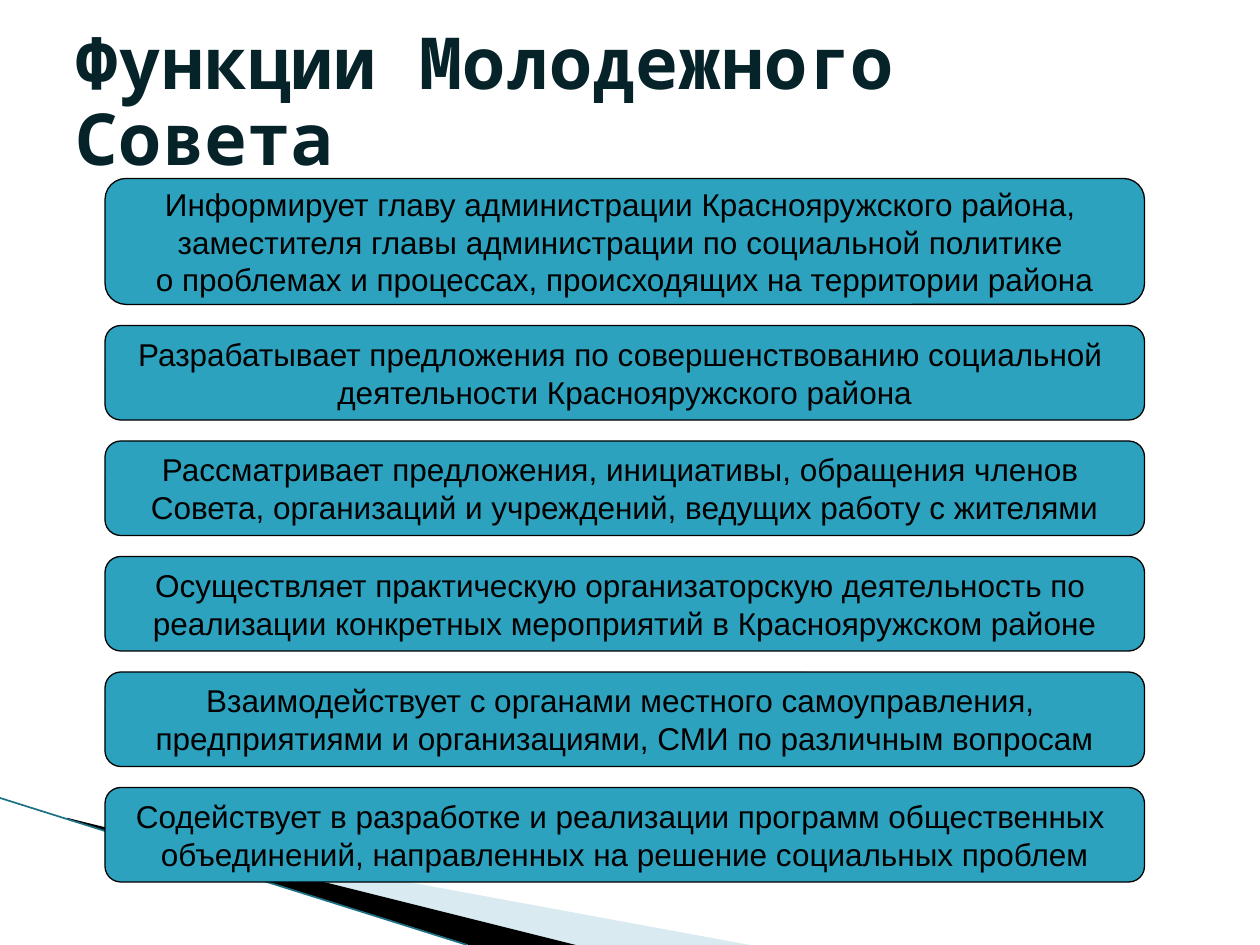
from dataclasses import dataclass

import pptx
import pptx.dml.color
import pptx.enum.shapes
import pptx.enum.text
import pptx.oxml
import pptx.oxml.ns
import pptx.util

Pt = pptx.util.Pt
RGBColor = pptx.dml.color.RGBColor

INK = RGBColor(0x06, 0x23, 0x29)
TEAL = RGBColor(0x2D, 0xA2, 0xBF)
DEEP_TEAL = RGBColor(0x1B, 0x70, 0x84)
PALE_BLUE = RGBColor(0xA0, 0xCB, 0xDC)
BLACK = RGBColor(0, 0, 0)

SLIDE_WIDTH, SLIDE_HEIGHT = 720, 540
CARD_LEFT, CARD_WIDTH, CARD_GAP = 60, 594, 12
FIRST_CARD_TOP = 102
HANGING_INDENT = 27


@dataclass
class Function:
    lines: list[str]

    @property
    def height(self) -> float:
        return 18 * (len(self.lines) + 1)


@dataclass
class Wedge:
    points: list[tuple[float, float]]
    colour: RGBColor
    opacity: int = 100


FUNCTIONS = [
    Function(["Информирует главу администрации Краснояружского района, ",
              "заместителя главы администрации по социальной политике ",
              "о проблемах и процессах, происходящих на территории района"]),
    Function(["Разрабатывает предложения по совершенствованию социальной ",
              "деятельности Краснояружского района"]),
    Function(["Рассматривает предложения, инициативы, обращения членов ",
              "Совета, организаций и учреждений, ведущих работу с жителями"]),
    Function(["Осуществляет практическую организаторскую деятельность по ",
              "реализации конкретных мероприятий в Краснояружском районе"]),
    Function(["Взаимодействует с органами местного самоуправления, ",
              "предприятиями и организациями, СМИ по различным вопросам"]),
    Function(["Содействует в разработке и реализации программ общественных ",
              "объединений, направленных на решение социальных проблем"]),
]

WEDGES = [
    Wedge([(39.6, 468.4), (428.4, 540), (328.3, 540), (39.6, 468)], PALE_BLUE, 40),
    Wedge([(38.2, 467.3), (329, 540), (268, 540), (38.9, 468)], BLACK),
]


def add_title(slide, text: str) -> None:
    title = slide.shapes.title
    title.left, title.top, title.width, title.height = Pt(36), Pt(18), Pt(648), Pt(75.6)
    frame = title.text_frame
    frame.text = text
    frame.word_wrap = True
    frame.auto_size = pptx.enum.text.MSO_AUTO_SIZE.NONE
    frame.vertical_anchor = pptx.enum.text.MSO_ANCHOR.MIDDLE
    frame.margin_top = Pt(11.6)
    heading = frame.paragraphs[0]
    heading.alignment = pptx.enum.text.PP_ALIGN.LEFT
    heading.line_spacing = 0.88
    heading.font.name = "Noto Sans Mono"
    heading.font.size = Pt(41)
    heading.font.bold = True
    heading.font.color.rgb = INK


def add_wedge(slide, wedge: Wedge) -> None:
    start, *rest = [(Pt(x), Pt(y)) for x, y in wedge.points]
    builder = slide.shapes.build_freeform(*start)
    builder.add_line_segments(rest, close=True)
    shape = builder.convert_to_shape()
    shape.shadow.inherit = False
    shape.fill.solid()
    shape.fill.fore_color.rgb = wedge.colour
    shape.line.fill.background()
    if wedge.opacity < 100:
        colour = shape.fill._xPr.find(".//" + pptx.oxml.ns.qn("a:srgbClr"))
        alpha = pptx.oxml.parse_xml(
            f'<a:alpha {pptx.oxml.ns.nsdecls("a")} val="{wedge.opacity * 1000}"/>')
        colour.append(alpha)


def add_edge_line(slide) -> None:
    edge = slide.shapes.add_connector(
        pptx.enum.shapes.MSO_CONNECTOR.STRAIGHT, Pt(0), Pt(456), Pt(267), Pt(540))
    edge.line.color.rgb = DEEP_TEAL
    edge.line.width = Pt(0.95)
    edge._element.spPr.append(
        pptx.oxml.parse_xml(f'<a:effectLst {pptx.oxml.ns.nsdecls("a")}/>'))


def add_card(slide, function: Function, top: float) -> None:
    card = slide.shapes.add_shape(
        pptx.enum.shapes.MSO_SHAPE.ROUNDED_RECTANGLE,
        Pt(CARD_LEFT), Pt(top), Pt(CARD_WIDTH), Pt(function.height))
    card.shadow.inherit = False
    card.fill.solid()
    card.fill.fore_color.rgb = TEAL
    card.line.color.rgb = BLACK
    card.line.width = Pt(0.75)
    frame = card.text_frame
    frame.text = "\n".join(function.lines)
    frame.word_wrap = False
    frame.vertical_anchor = pptx.enum.text.MSO_ANCHOR.MIDDLE
    for line in frame.paragraphs:
        line.alignment = pptx.enum.text.PP_ALIGN.CENTER
        properties = line._p.get_or_add_pPr()
        properties.set("marL", str(Pt(HANGING_INDENT)))
        properties.set("indent", str(-Pt(HANGING_INDENT)))
        line.font.name = "Arial"
        line.font.size = Pt(18)
        line.font.color.rgb = BLACK


def main() -> None:
    deck = pptx.Presentation()
    deck.slide_width, deck.slide_height = Pt(SLIDE_WIDTH), Pt(SLIDE_HEIGHT)
    slide = deck.slides.add_slide(deck.slide_layouts[5])

    # Corner decoration
    for wedge in WEDGES:
        add_wedge(slide, wedge)
    add_edge_line(slide)

    # Heading
    add_title(slide, "Функции Молодежного Совета")

    # Stack of functions
    top = FIRST_CARD_TOP
    for function in FUNCTIONS:
        add_card(slide, function, top)
        top += function.height + CARD_GAP

    deck.save("out.pptx")


if __name__ == "__main__":
    main()
